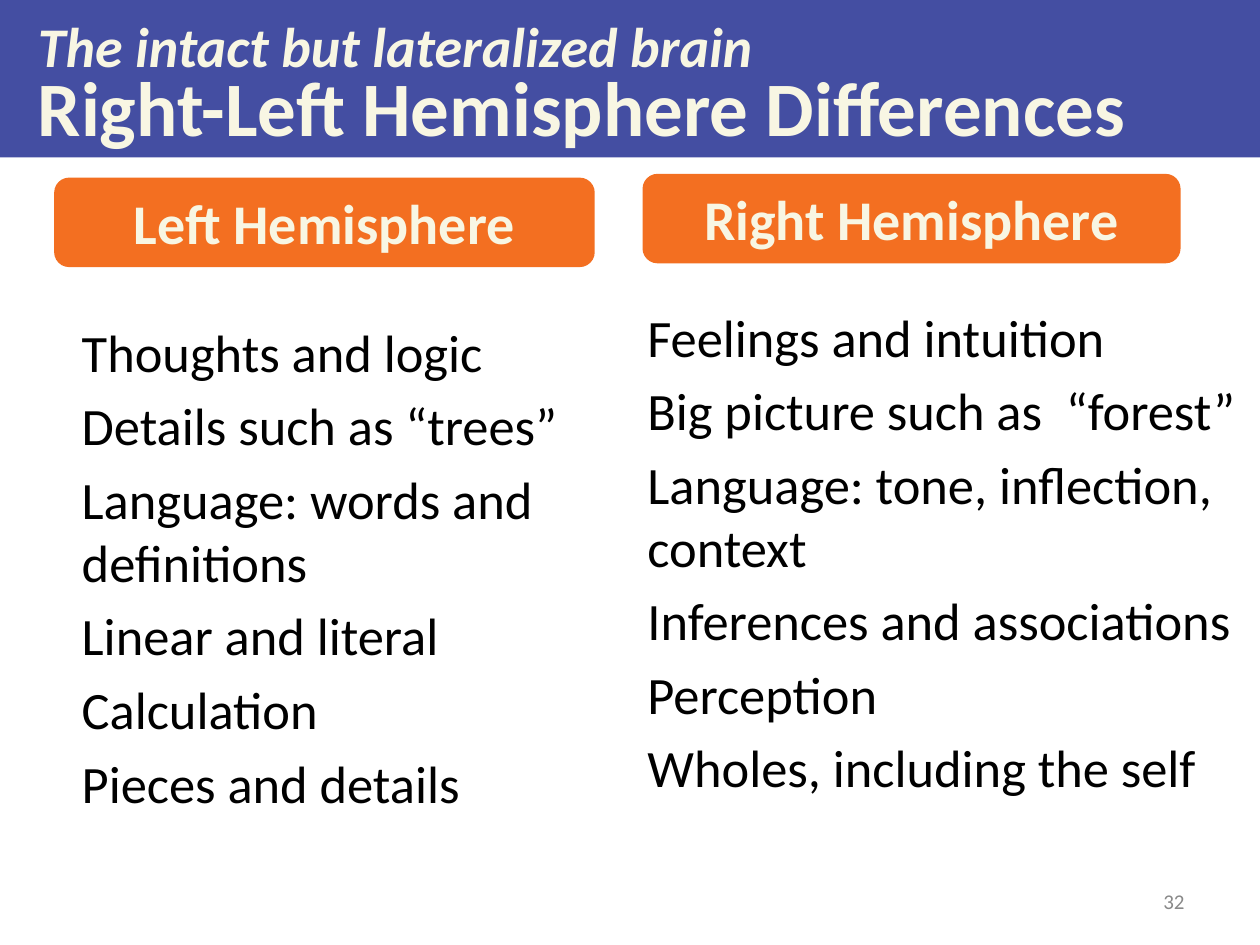
"""Build a slide comparing the left and right brain hemispheres."""
from pptx import Presentation
from pptx.dml.color import RGBColor
from pptx.enum.shapes import MSO_SHAPE
from pptx.enum.text import MSO_ANCHOR, MSO_AUTO_SIZE, PP_ALIGN
from pptx.util import Inches, Pt

COLORS = {"blue": "444EA2", "orange": "F36F21", "cream": "F8F6E3",
          "black": "000000", "gray": "898989"}
SIDES = [
    ("Left Hemisphere", (0.43, 1.41, 4.29, 0.71), (0.55, 2.49, 4.42, 4.81),
     ["Thoughts and logic", "Details such as “trees”",
      "Language: words and definitions", "Linear and literal",
      "Calculation", "Pieces and details"]),
    ("Right Hemisphere", (5.1, 1.38, 4.27, 0.71), (5.04, 2.37, 4.96, 4.92),
     ["Feelings and intuition", "Big picture such as  “forest”",
      "Language: tone, inflection, context", "Inferences and associations",
      "Perception", "Wholes, including the self"]),
]


def style(run, size, color, bold=False, italic=False):
    """Format one run of text."""
    font = run.font
    font.name, font.size, font.bold, font.italic = "Calibri", Pt(size), bold, italic
    font.color.rgb = RGBColor.from_string(COLORS[color])


def paint(shape, color):
    """Give a shape a solid fill."""
    shape.fill.solid()
    shape.fill.fore_color.rgb = RGBColor.from_string(COLORS[color])


deck = Presentation()
deck.slide_width, deck.slide_height = Inches(10), Inches(7.5)
slide = deck.slides.add_slide(deck.slide_layouts[5])

title = slide.shapes.title
title.left, title.top = Inches(0), Inches(0)
title.width, title.height = Inches(10), Inches(1.25)
paint(title, "blue")
frame = title.text_frame
frame.text = "The intact but lateralized brain\vRight-Left Hemisphere Differences"
frame.auto_size = MSO_AUTO_SIZE.NONE
frame.vertical_anchor = MSO_ANCHOR.MIDDLE
frame.margin_left = Inches(0.3)
head = frame.paragraphs[0]
head.alignment = PP_ALIGN.LEFT
head.line_spacing = Pt(42)
style(head.runs[0], 32, "cream", bold=True, italic=True)
style(head.runs[1], 44, "cream", bold=True)

for name, place, area, traits in SIDES:
    label = slide.shapes.add_shape(MSO_SHAPE.ROUNDED_RECTANGLE, *map(Inches, place))
    label.shadow.inherit = False
    label.line.fill.background()
    paint(label, "orange")
    label.text_frame.text = name
    label.text_frame.vertical_anchor = MSO_ANCHOR.MIDDLE
    para = label.text_frame.paragraphs[0]
    para.alignment = PP_ALIGN.CENTER
    style(para.runs[0], 32, "cream", bold=True)

    body = slide.shapes.add_textbox(*map(Inches, area)).text_frame
    body.word_wrap = True
    body.text = "\n".join(traits)
    for para in body.paragraphs:
        para.space_before = Pt(6)
        style(para.runs[0], 30, "black")

page = slide.shapes.add_textbox(Inches(7.17), Inches(6.95), Inches(2.33), Inches(0.4))
page.text_frame.text = "32"
page.text_frame.word_wrap = True
page.text_frame.vertical_anchor = MSO_ANCHOR.MIDDLE
para = page.text_frame.paragraphs[0]
para.alignment = PP_ALIGN.RIGHT
style(para.runs[0], 12, "gray")

deck.save("out.pptx")
